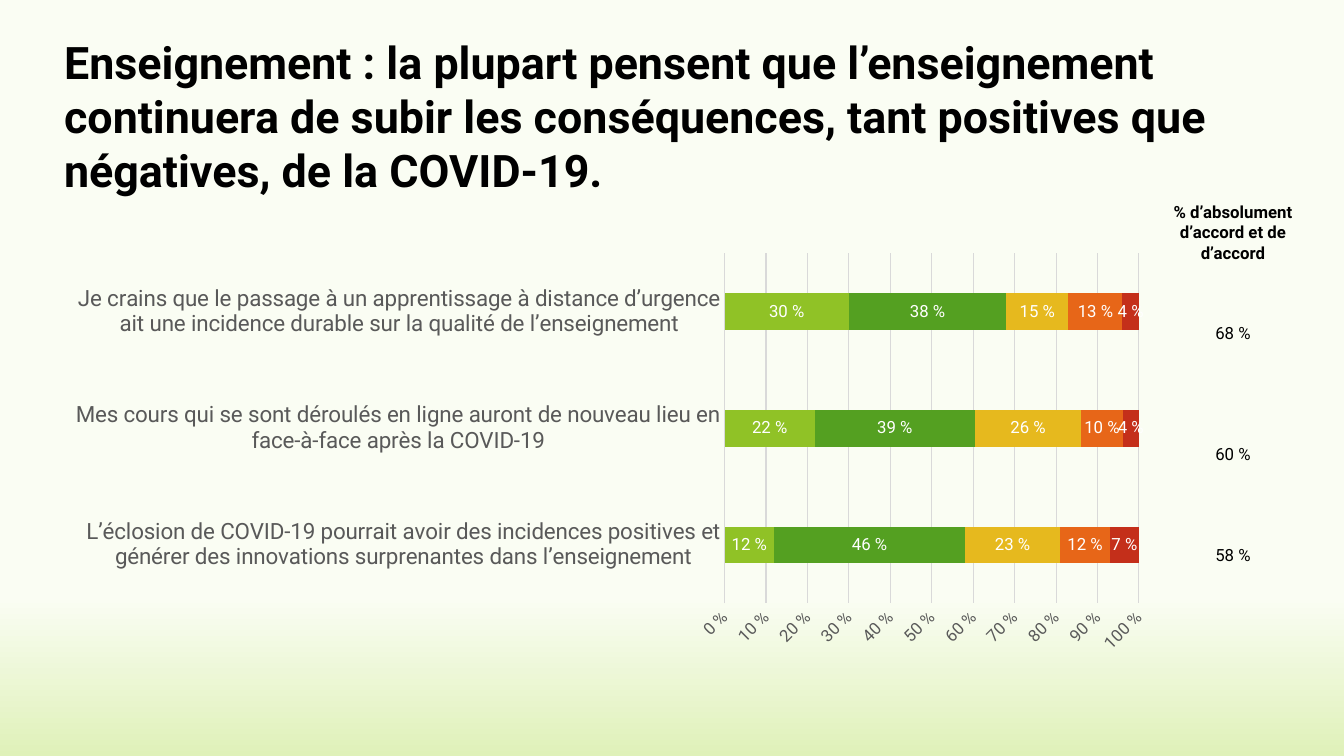
import pptx
import pptx.chart.data
import pptx.dml.color
import pptx.enum.chart
import pptx.enum.text
import pptx.oxml
import pptx.oxml.ns
import pptx.util

PX = 914400 / 100.8
FONT = "Roboto"
PERCENT = "0\\ %"
GRID = "D9D9D9"
STATEMENTS = [
    "L’éclosion de COVID-19 pourrait avoir des incidences positives et générer "
    "des innovations surprenantes dans l’enseignement",
    "Mes cours qui se sont déroulés en ligne auront de nouveau lieu en face-à-face après la COVID-19",
    "Je crains que le passage à un apprentissage à distance d’urgence ait une "
    "incidence durable sur la qualité de l’enseignement",
]
ANSWERS = [
    ("90C226", (0.12, 0.22, 0.30)),
    ("54A021", (0.46, 0.39, 0.38)),
    ("E6B91E", (0.23, 0.26, 0.15)),
    ("E76618", (0.12, 0.10, 0.13)),
    ("C42F1A", (0.07, 0.04, 0.04)),
]
# Text and the space before it, in points
AGREEMENT = [
    ("% d’absolument d’accord et de d’accord", 0),
    ("68 %", 43),
    ("60 %", 72),
    ("58 %", 58),
]


def px(length):
    return pptx.util.Emu(round(length * PX))


def color(hex_value):
    return pptx.dml.color.RGBColor.from_string(hex_value)


def apply(target, values):
    for name, value in values.items():
        setattr(target, name, value)


def style_font(font, size, hex_value, bold=False):
    apply(font, {"name": FONT, "size": pptx.util.Pt(size), "bold": bold})
    font.color.rgb = color(hex_value)


def style_line(line, hex_value):
    line.color.rgb = color(hex_value)
    line.width = pptx.util.Pt(0.75)


def paint_background(slide):
    fill = slide.background.fill
    fill.gradient()
    fill.gradient_angle = 270
    for stop, (position, hex_value) in zip(fill.gradient_stops, [(0.79, "FAFDF3"), (1, "DFF1B9")]):
        stop.position = position
        stop.color.rgb = color(hex_value)


def place_title(slide, left, top, width, height):
    title = slide.shapes.title
    apply(title, {"left": px(left), "top": px(top), "width": px(width), "height": px(height)})
    apply(title.text_frame, {
        "text": "Enseignement : la plupart pensent que l’enseignement continuera de subir "
                "les conséquences, tant positives que négatives, de la COVID-19.",
        "word_wrap": True,
        "auto_size": pptx.enum.text.MSO_AUTO_SIZE.NONE,
        "vertical_anchor": pptx.enum.text.MSO_ANCHOR.TOP,
    })
    paragraph = title.text_frame.paragraphs[0]
    paragraph.alignment = pptx.enum.text.PP_ALIGN.LEFT
    style_font(paragraph.runs[0].font, 32, "000000", True)


def fix_plot_area(chart, x, y, w, h):
    """Set the inner plot area as fractions of the chart."""
    plot_area = chart._chartSpace.chart.plotArea
    for layout in plot_area.findall(pptx.oxml.ns.qn("c:layout")):
        plot_area.remove(layout)
    sizes = "".join(f'<c:{key} val="{value}"/>' for key, value in
                    {"x": x, "y": y, "w": w, "h": h}.items())
    plot_area.insert(0, pptx.oxml.parse_xml(
        f'<c:layout {pptx.oxml.ns.nsdecls("c")}><c:manualLayout><c:layoutTarget val="inner"/>'
        f'<c:xMode val="edge"/><c:yMode val="edge"/>{sizes}</c:manualLayout></c:layout>'))


def place_answers_chart(slide, left, top, width, height):
    answers = pptx.chart.data.CategoryChartData(number_format=PERCENT)
    answers.categories = STATEMENTS
    for number, (_, shares) in enumerate(ANSWERS, 1):
        answers.add_series(f"Series {number}", shares)
    chart = slide.shapes.add_chart(
        pptx.enum.chart.XL_CHART_TYPE.BAR_STACKED_100,
        px(left), px(top), px(width), px(height), answers).chart
    apply(chart, {"has_legend": False, "has_title": False})
    style_font(chart.font, 10, "000000")
    fix_plot_area(chart, 0.602, 0.022, 0.372, 0.84)

    bars = chart.plots[0]
    apply(bars, {"gap_width": 219, "overlap": 100, "vary_by_categories": False})
    for series, (hex_value, _) in zip(bars.series, ANSWERS):
        series.format.fill.solid()
        series.format.fill.fore_color.rgb = color(hex_value)
        labels = series.data_labels
        apply(labels, {"show_value": True, "number_format": PERCENT,
                       "number_format_is_linked": False})
        style_font(labels.font, 12, "FFFFFF")

    no_tick = pptx.enum.chart.XL_TICK_MARK.NONE
    statements, scale = chart.category_axis, chart.value_axis
    for axis, size in ((statements, 16), (scale, 12)):
        apply(axis, {"major_tick_mark": no_tick, "minor_tick_mark": no_tick})
        style_font(axis.tick_labels.font, size, "595959")
    style_line(statements.format.line, GRID)
    apply(scale, {"minimum_scale": 0, "maximum_scale": 1, "major_unit": 0.1,
                  "has_major_gridlines": True})
    style_line(scale.major_gridlines.format.line, GRID)
    scale.format.line.fill.background()
    apply(scale.tick_labels, {"number_format": PERCENT, "number_format_is_linked": False})
    scale._element.find(".//" + pptx.oxml.ns.qn("a:bodyPr")).set("rot", "-2700000")


def place_agreement(slide, left, top, width, height):
    frame = slide.shapes.add_textbox(px(left), px(top), px(width), px(height)).text_frame
    frame.word_wrap = True
    for index, (text, space) in enumerate(AGREEMENT):
        paragraph = frame.add_paragraph() if index else frame.paragraphs[0]
        apply(paragraph, {"text": text, "alignment": pptx.enum.text.PP_ALIGN.CENTER})
        if space:
            paragraph.space_before = pptx.util.Pt(space)
        style_font(paragraph.runs[0].font, 12, "000000", index == 0)


def main():
    deck = pptx.Presentation()
    apply(deck, {"slide_width": px(1344), "slide_height": px(756)})
    slide = deck.slides.add_slide(deck.slide_layouts[5])
    paint_background(slide)
    place_title(slide, 54, 30, 1271, 95)
    place_answers_chart(slide, 54, 244, 1114, 417)
    place_agreement(slide, 1154, 197, 158, 458)
    deck.save("out.pptx")


if __name__ == "__main__":
    main()
